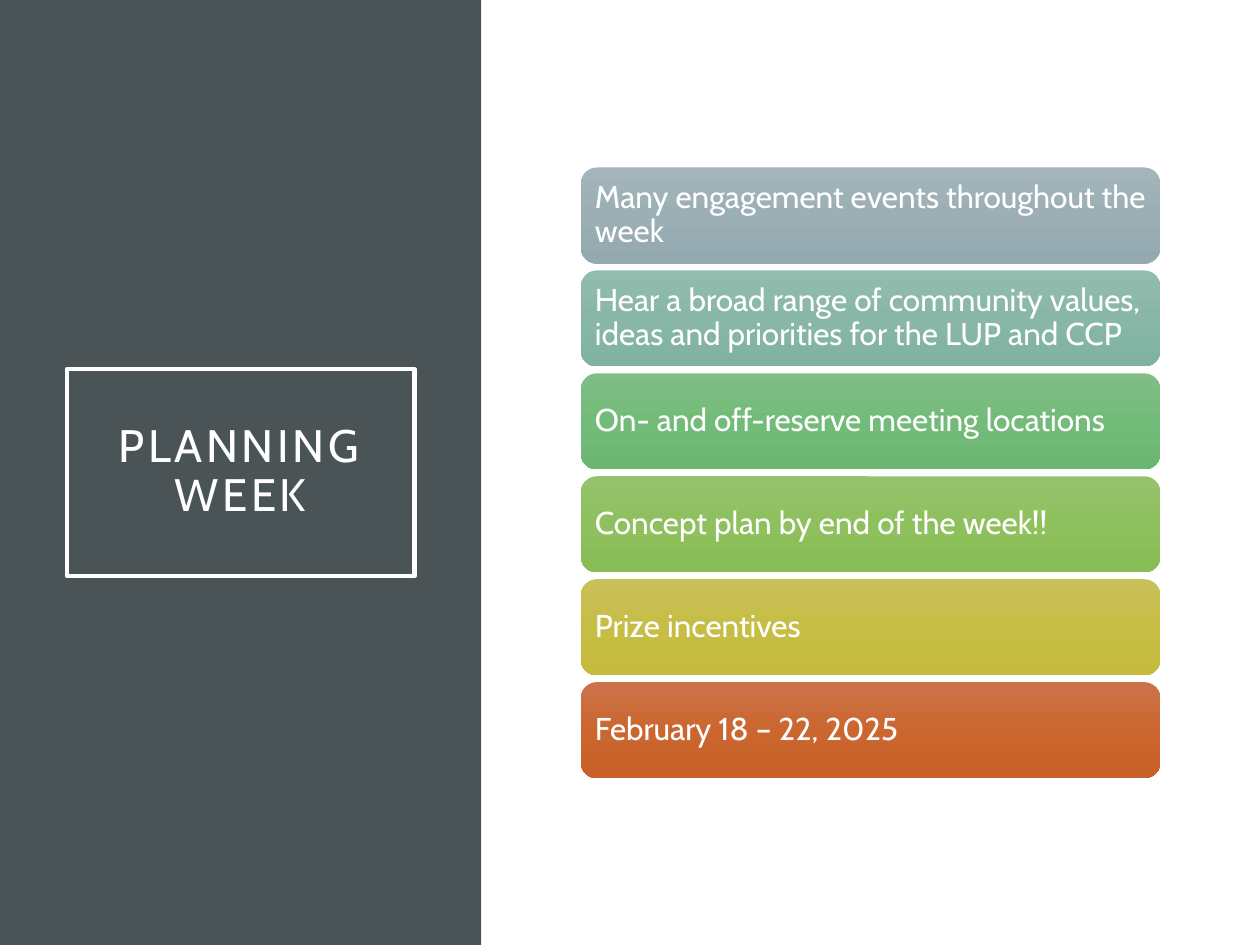
from lxml.etree import fromstring
from pptx import Presentation
from pptx.dml.color import RGBColor as RGB
from pptx.enum.shapes import MSO_SHAPE as Shape
from pptx.enum.text import MSO_ANCHOR as Anchor, MSO_AUTO_SIZE as Fit, PP_ALIGN as Align
from pptx.oxml.ns import nsdecls
from pptx.util import Pt

FONT = "Cabin"
WHITE = RGB(0xFF, 0xFF, 0xFF)
SLATE = RGB(0x4A, 0x53, 0x56)

# Band text with its gradient: top, middle, bottom
BANDS = [
    ("Many engagement events throughout the week",
     (RGB(0xA3, 0xB5, 0xBB), RGB(0x9B, 0xAF, 0xB5), RGB(0x93, 0xA9, 0xAF))),
    ("Hear a broad range of community values, ideas and priorities for the LUP and CCP",
     (RGB(0x92, 0xBC, 0xAD), RGB(0x88, 0xB7, 0xA7), RGB(0x80, 0xB2, 0xA1))),
    ("On- and off-reserve meeting locations",
     (RGB(0x80, 0xBE, 0x85), RGB(0x73, 0xBB, 0x79), RGB(0x6B, 0xB6, 0x71))),
    ("Concept plan by end of the week!!",
     (RGB(0x96, 0xC2, 0x6D), RGB(0x8E, 0xC0, 0x5D), RGB(0x88, 0xBC, 0x55))),
    ("Prize incentives",
     (RGB(0xC8, 0xC0, 0x5A), RGB(0xC6, 0xBD, 0x45), RGB(0xC4, 0xBA, 0x3D))),
    ("February 18 – 22, 2025",
     (RGB(0xCC, 0x73, 0x4B), RGB(0xCB, 0x66, 0x2F), RGB(0xC8, 0x61, 0x28))),
]
LEFT, TOP, WIDE, HIGH, STEP = 331.9, 95.7, 331.2, 54.9, 58.82


def put_text(shape, text, size, align, inset):
    frame = shape.text_frame
    frame.text = text
    frame.word_wrap = True
    frame.auto_size = Fit.NONE
    frame.vertical_anchor = Anchor.MIDDLE
    frame.margin_left = frame.margin_right = Pt(inset)
    frame.margin_top = frame.margin_bottom = Pt(inset)
    para = frame.paragraphs[0]
    para.alignment = align
    para.line_spacing = 0.9
    font = para.font
    font.name, font.size, font.color.rgb = FONT, Pt(size), WHITE
    return font


def add_box(slide, kind, left, top, wide, high):
    box = slide.shapes.add_shape(kind, Pt(left), Pt(top), Pt(wide), Pt(high))
    box.shadow.inherit = False
    box.line.fill.background()
    return box


def shade(shape, tones):
    """Fill from top to bottom with evenly spaced tones."""
    gap = 100000 // (len(tones) - 1)
    stops = "".join(f'<a:gs pos="{i * gap}"><a:srgbClr val="{tone}"/></a:gs>'
                    for i, tone in enumerate(tones))
    grad = fromstring(f'<a:gradFill {nsdecls("a")} rotWithShape="1"><a:gsLst>{stops}</a:gsLst>'
                      '<a:lin ang="5400000" scaled="0"/></a:gradFill>')
    shape._element.spPr.find("{*}prstGeom").addnext(grad)


def add_panel(slide):
    panel = add_box(slide, Shape.RECTANGLE, 0, 0, 275, 540)
    panel.fill.solid()
    panel.fill.fore_color.rgb = SLATE
    # Send the panel behind the title
    slide.shapes.title._element.addprevious(panel._element)


def set_title(slide, text):
    title = slide.shapes.title
    title.left, title.top, title.width, title.height = Pt(38.2), Pt(211), Pt(198.7), Pt(118)
    title.line.color.rgb = WHITE
    title.line.width = Pt(2.5)
    font = put_text(title, text, 26, Align.CENTER, 14.4)
    font._element.set("spc", "200")  # letter spacing


def add_band(slide, row, text, tones):
    band = add_box(slide, Shape.ROUNDED_RECTANGLE, LEFT, TOP + row * STEP, WIDE, HIGH)
    shade(band, tones)
    put_text(band, text, 18, Align.LEFT, 5.4)


def main():
    deck = Presentation()
    deck.slide_width, deck.slide_height = Pt(720), Pt(540)
    slide = deck.slides.add_slide(deck.slide_layouts[5])
    # Left side
    add_panel(slide)
    set_title(slide, "PLANNING WEEK")
    # Right side
    for row, (text, tones) in enumerate(BANDS):
        add_band(slide, row, text, tones)
    deck.save("out.pptx")


if __name__ == "__main__":
    main()
